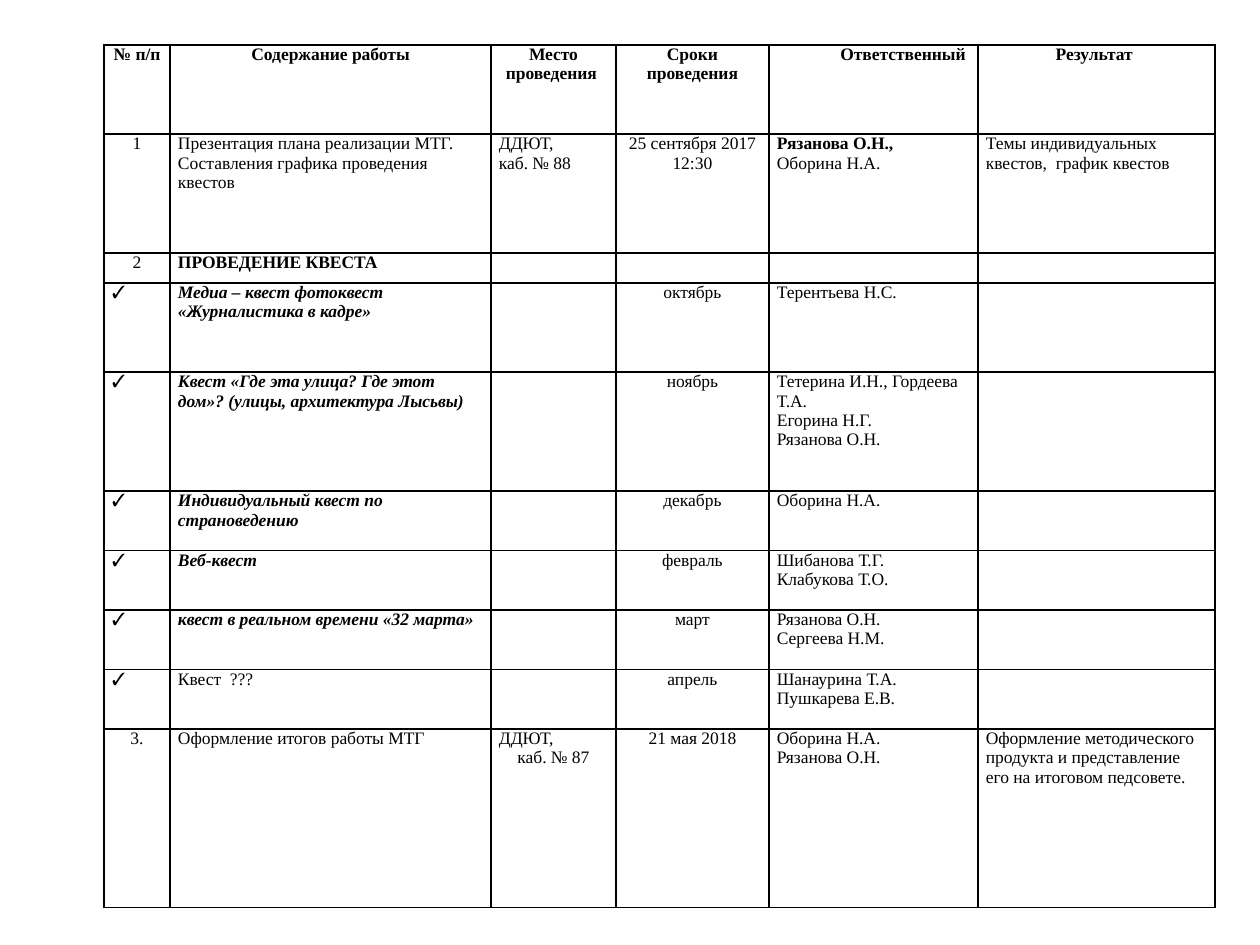
from dataclasses import dataclass, field
from typing import Optional

from lxml import etree
from pptx import Presentation, util as u
from pptx.dml.color import RGBColor
from pptx.enum import text
from pptx.oxml import ns

PX = 914400 / 126
LEFT, CENTER, RIGHT = text.PP_ALIGN.LEFT, text.PP_ALIGN.CENTER, text.PP_ALIGN.RIGHT


def px(n: float) -> u.Emu:
    return u.Emu(round(n * PX))


@dataclass(frozen=True)
class Theme:
    font: str = "Times New Roman"
    size: int = 10
    ink: str = "000000"
    border_pt: int = 1


@dataclass(frozen=True)
class Para:
    text: str
    fmt: dict = field(default_factory=dict)
    align: Optional[text.PP_ALIGN] = None


@dataclass(frozen=True)
class Row:
    lines: int
    cells: tuple


THEME = Theme()
BOLD = {"bold": True}
TITLE = {"bold": True, "italic": True}
TABLE_X, TABLE_Y, TABLE_H = 104, 45, 863
COL_WIDTHS = (66, 321, 125, 153, 209, 237)
COL_ALIGNS = (CENTER, LEFT, LEFT, CENTER, LEFT, LEFT)


def head(label: str, align: text.PP_ALIGN = CENTER) -> tuple:
    return (Para(label, BOLD, align),)


def plain(*labels: str) -> tuple:
    return tuple(Para(label) for label in labels)


def quest(lines: int, title: str, month: str, *people: str, fmt: dict = TITLE) -> Row:
    return Row(lines, ((Para("✓", align=LEFT),), (Para(title, fmt),), (),
                       plain(month), plain(*people), ()))


ROWS = (
    Row(3, (head("№ п/п"), head("Содержание работы"), head("Место проведения "),
            head("Сроки проведения"), head("Ответственный ", RIGHT), head("Результат "))),
    Row(4, (plain("1"),
            plain("Презентация плана реализации МТГ.", "Составления графика проведения квестов"),
            plain("ДДЮТ,", "каб. № 88"),
            plain("25 сентября 2017", "12:30"),
            (Para("Рязанова О.Н.,", BOLD), Para("Оборина Н.А.")),
            plain("Темы индивидуальных квестов,  график квестов"))),
    Row(1, (plain("2"), (Para("ПРОВЕДЕНИЕ КВЕСТА", BOLD),), (), (), (), ())),
    quest(3, "Медиа – квест фотоквест «Журналистика в кадре»", "октябрь", "Терентьева Н.С."),
    quest(4, "Квест «Где эта улица? Где этот дом»? (улицы, архитектура Лысьвы)", "ноябрь",
          "Тетерина И.Н., Гордеева Т.А.", "Егорина Н.Г.", "Рязанова О.Н."),
    quest(2, "Индивидуальный квест по страноведению", "декабрь", "Оборина Н.А."),
    quest(2, "Веб-квест", "февраль", "Шибанова Т.Г.", "Клабукова Т.О."),
    quest(2, "квест в реальном времени «32 марта»", "март", "Рязанова О.Н.", "Сергеева Н.М."),
    quest(2, "Квест  ???", "апрель", "Шанаурина Т.А.", "Пушкарева Е.В.", fmt={}),
    Row(6, (plain("3."), plain("Оформление итогов работы МТГ"),
            (Para("ДДЮТ,"), Para("каб. № 87", align=CENTER)),
            plain("21 мая 2018"),
            plain("Оборина Н.А.", "Рязанова О.Н."),
            plain("Оформление методического продукта и представление его на итоговом педсовете."))),
)


def add_borders(cell) -> None:
    tc_pr = cell._tc.get_or_add_tcPr()
    for i, side in enumerate(("lnL", "lnR", "lnT", "lnB")):
        ln = etree.Element(ns.qn(f"a:{side}"), w=str(u.Pt(THEME.border_pt)))
        fill = etree.SubElement(ln, ns.qn("a:solidFill"))
        etree.SubElement(fill, ns.qn("a:srgbClr"), val=THEME.ink)
        tc_pr.insert(i, ln)


def write_para(p, para: Para, align: text.PP_ALIGN) -> None:
    p.alignment = align if para.align is None else para.align
    r = p.add_run()
    r.text = para.text
    base = {"name": THEME.font, "size": u.Pt(THEME.size), "bold": False, "italic": False}
    for name, value in {**base, **para.fmt}.items():
        setattr(r.font, name, value)
    r.font.color.rgb = RGBColor.from_string(THEME.ink)


def fill_cell(cell, paras: tuple, align: text.PP_ALIGN) -> None:
    margins = {"margin_left": px(8), "margin_right": px(8), "margin_top": 0, "margin_bottom": 0}
    for name, value in margins.items():
        setattr(cell, name, value)
    cell.fill.background()
    add_borders(cell)
    tf = cell.text_frame
    for i, para in enumerate(paras):
        write_para(tf.add_paragraph() if i else tf.paragraphs[0], para, align)
    if not paras:
        end = etree.SubElement(tf.paragraphs[0]._p, ns.qn("a:endParaRPr"))
        end.set("sz", str(THEME.size * 100))


def add_plan(s) -> None:
    table = s.shapes.add_table(len(ROWS), len(COL_WIDTHS), px(TABLE_X), px(TABLE_Y),
                               px(sum(COL_WIDTHS)), px(TABLE_H)).table
    table.first_row = table.horz_banding = False
    for col, width in zip(table.columns, COL_WIDTHS):
        col.width = px(width)
    line_height = TABLE_H / sum(row.lines for row in ROWS)
    for table_row, row in zip(table.rows, ROWS):
        table_row.height = px(row.lines * line_height)
        for cell, paras, align in zip(table_row.cells, row.cells, COL_ALIGNS):
            fill_cell(cell, paras, align)


def main() -> None:
    prs = Presentation()
    prs.slide_width, prs.slide_height = px(1260), px(945)
    s = prs.slides.add_slide(prs.slide_layouts[6])
    add_plan(s)
    prs.save("out.pptx")


if __name__ == "__main__":
    main()
